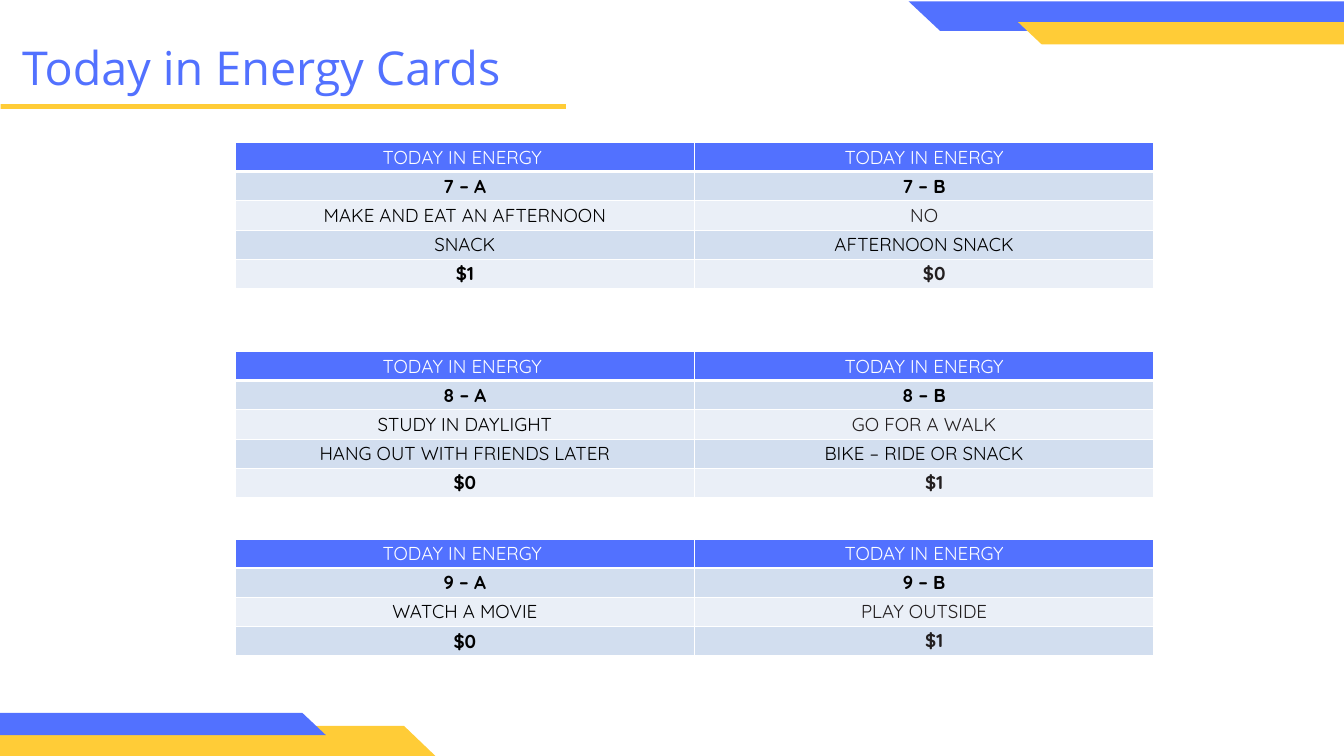
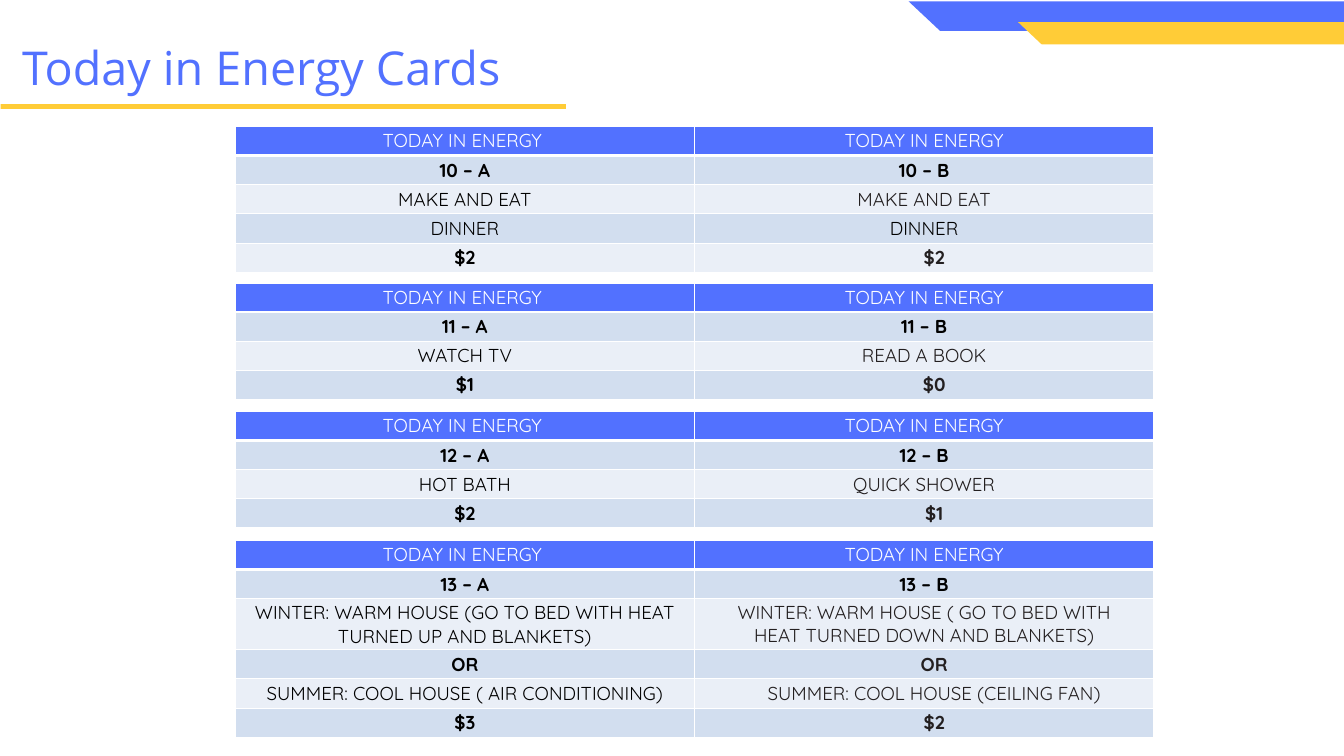
from dataclasses import dataclass

from lxml import etree
from pptx import Presentation
from pptx.dml.color import RGBColor
from pptx.enum.shapes import MSO_SHAPE
from pptx.enum.text import MSO_ANCHOR, PP_ALIGN
from pptx.oxml.ns import qn
from pptx.slide import Slide
from pptx.table import _Cell
from pptx.util import Inches, Pt

RECTANGLE = MSO_SHAPE.RECTANGLE
MIDDLE = MSO_ANCHOR.MIDDLE
CENTER = PP_ALIGN.CENTER

BLUE = "5271FF"
YELLOW = "FFCC37"
WHITE = "FFFFFF"
BLACK = "000000"
CHARCOAL = "231F20"
BAND_COLORS = ("D2DEEF", "EAEFF7")

TITLE_FONT = "Open Sans"
TABLE_FONT = "Quicksand"
TABLE_LEFT = Inches(3.5)
TABLE_WIDTH = Inches(13.67)
ROW_HEIGHT = Inches(2.17 / 5)
TALL_ROW_HEIGHT = Inches(0.76)


@dataclass(frozen=True)
class Indent:
    """Paragraph margins of a right-hand cell without insets."""
    left: float
    right: float
    first_line: float = 0
    line_spacing: float = 1.0


@dataclass(frozen=True)
class RowStyle:
    bold: bool = False
    right_indent: Indent | None = None


@dataclass(frozen=True)
class Row:
    left: str
    right: str
    style: RowStyle
    height: int = ROW_HEIGHT


@dataclass(frozen=True)
class Card:
    number: int
    top: float
    choices: tuple[Row, ...]


@dataclass(frozen=True)
class Band:
    color: str
    points: tuple[tuple[float, float], ...]


DETAIL_INDENT = Indent(0.31, 0.31)
HANGING_INDENT = Indent(1.62, 0.71, -0.61, 0.97)
PLAIN = RowStyle()
LABEL = RowStyle(bold=True)
DETAIL = RowStyle(right_indent=DETAIL_INDENT)
HANGING = RowStyle(right_indent=HANGING_INDENT)
PRICE = RowStyle(bold=True, right_indent=HANGING_INDENT)

TOP_BANDS = (
    Band(BLUE, ((20, 0.46), (13.99, 0.46), (13.52, 0.02), (20, 0.02))),
    Band(YELLOW, ((20, 0.66), (15.5, 0.66), (15.15, 0.33), (20, 0.33))),
)
BOTTOM_BANDS = (
    Band(YELLOW, ((0, 10.8), (6.01, 10.8), (6.48, 11.25), (0, 11.25))),
    Band(BLUE, ((0, 10.61), (4.5, 10.61), (4.85, 10.94), (0, 10.94))),
)

AFTERNOON_CARDS = (
    Card(7, 2.12, (
        Row("MAKE AND EAT AN AFTERNOON", "NO", DETAIL),
        Row("SNACK", "AFTERNOON SNACK", PLAIN),
        Row("$1", "$0", PRICE),
    )),
    Card(8, 5.23, (
        Row("STUDY IN DAYLIGHT", "GO FOR A WALK", DETAIL),
        Row("HANG OUT WITH FRIENDS LATER", "BIKE – RIDE OR SNACK", PLAIN),
        Row("$0", "$1", PRICE),
    )),
    Card(9, 8.02, (
        Row("WATCH A MOVIE", "PLAY OUTSIDE", DETAIL),
        Row("$0", "$1", PRICE),
    )),
)
EVENING_CARDS = (
    Card(10, 1.88, (
        Row("MAKE AND EAT", "MAKE AND EAT", DETAIL),
        Row("DINNER", "DINNER", PLAIN),
        Row("$2", "$2", PRICE),
    )),
    Card(11, 4.21, (
        Row("WATCH TV", "READ A BOOK", DETAIL),
        Row("$1", "$0", PRICE),
    )),
    Card(12, 6.12, (
        Row("HOT BATH", "QUICK SHOWER", DETAIL),
        Row("$2", "$1", PRICE),
    )),
    Card(13, 8.04, (
        Row("WINTER: WARM HOUSE (GO TO BED WITH HEAT TURNED UP AND BLANKETS)",
            "WINTER: WARM HOUSE ( GO TO BED WITH HEAT TURNED DOWN AND BLANKETS)",
            DETAIL, TALL_ROW_HEIGHT),
        Row("OR", "OR", PRICE),
        Row("SUMMER: COOL HOUSE ( AIR CONDITIONING)",
            "SUMMER: COOL HOUSE (CEILING FAN)", HANGING),
        Row("$3", "$2", PRICE),
    )),
)


def set_fill(target, color: str) -> None:
    """Give a shape, cell or font a solid colour."""
    target.fill.solid()
    target.fill.fore_color.rgb = RGBColor.from_string(color)


def draw_bands(slide: Slide, bands: tuple[Band, ...]) -> None:
    for band in bands:
        start, *others = [(Inches(x), Inches(y)) for x, y in band.points]
        builder = slide.shapes.build_freeform(*start)
        builder.add_line_segments(others)
        shape = builder.convert_to_shape()
        shape.shadow.inherit = False
        set_fill(shape, band.color)
        shape.line.fill.background()


def draw_title(slide: Slide) -> None:
    title = slide.shapes.add_textbox(Inches(0.23), Inches(0.29), Inches(8.19), Inches(1.42))
    text_frame = title.text_frame
    text_frame.word_wrap = True
    text_frame.vertical_anchor = MIDDLE
    text_frame.text = "Today in Energy Cards"
    font = text_frame.paragraphs[0].runs[0].font
    font.name, font.size = TITLE_FONT, Pt(50)
    set_fill(font, BLUE)

    underline = slide.shapes.add_shape(
        RECTANGLE, Inches(0.01), Inches(1.55), Inches(8.41), Inches(0.07))
    underline.shadow.inherit = False
    set_fill(underline, YELLOW)
    underline.line.fill.background()


def set_borders(cell: _Cell, bottom_points: int) -> None:
    properties = cell._tc.get_or_add_tcPr()
    for side in "LRTB":
        width = Pt(bottom_points if side == "B" else 1)
        line = etree.SubElement(properties, qn(f"a:ln{side}"), w=str(width))
        solid = etree.SubElement(line, qn("a:solidFill"))
        etree.SubElement(solid, qn("a:srgbClr"), val=WHITE)


def fill_cell(cell: _Cell, text: str, background: str, color: str,
              bold: bool, indent: Indent | None, bottom_points: int) -> None:
    set_borders(cell, bottom_points)
    set_fill(cell, background)
    cell.vertical_anchor = MIDDLE
    cell.margin_top = cell.margin_bottom = Inches(0.04)
    cell.text_frame.text = text
    paragraph = cell.text_frame.paragraphs[0]
    paragraph.alignment = CENTER
    if indent:
        cell.margin_left = cell.margin_right = 0
        cell.margin_top = cell.margin_bottom = 0
        properties = paragraph._p.get_or_add_pPr()
        properties.set("marL", str(Inches(indent.left)))
        properties.set("marR", str(Inches(indent.right)))
        properties.set("indent", str(Inches(indent.first_line)))
        paragraph.line_spacing = indent.line_spacing
    font = paragraph.runs[0].font
    font.name, font.size, font.bold = TABLE_FONT, Pt(20), bold
    set_fill(font, color)


def draw_card(slide: Slide, card: Card) -> None:
    rows = (
        Row("TODAY IN ENERGY ", "TODAY IN ENERGY", PLAIN),
        Row(f"{card.number} – A", f"{card.number} – B", LABEL),
        *card.choices,
    )
    height = sum(row.height for row in rows)
    table = slide.shapes.add_table(
        len(rows), 2, TABLE_LEFT, Inches(card.top), TABLE_WIDTH, height).table
    for index, row in enumerate(rows):
        table.rows[index].height = row.height
        is_header = index == 0
        background = BLUE if is_header else BAND_COLORS[(index - 1) % 2]
        text_color = WHITE if is_header else BLACK
        bottom_points = 3 if is_header else 1
        indent = row.style.right_indent
        fill_cell(table.cell(index, 0), row.left, background, text_color,
                  row.style.bold, None, bottom_points)
        fill_cell(table.cell(index, 1), row.right, background,
                  CHARCOAL if indent else text_color,
                  row.style.bold, indent, bottom_points)


def add_card_slide(presentation, cards: tuple[Card, ...],
                   bottom_bands: tuple[Band, ...] = ()) -> None:
    slide = presentation.slides.add_slide(presentation.slide_layouts[6])
    set_fill(slide.background, WHITE)
    draw_bands(slide, TOP_BANDS)
    draw_title(slide)
    draw_bands(slide, bottom_bands)
    for card in cards:
        draw_card(slide, card)


def main() -> None:
    presentation = Presentation()
    presentation.slide_width = Inches(20)
    presentation.slide_height = Inches(11.25)
    add_card_slide(presentation, AFTERNOON_CARDS, BOTTOM_BANDS)
    add_card_slide(presentation, EVENING_CARDS)
    presentation.save("out.pptx")


if __name__ == "__main__":
    main()
